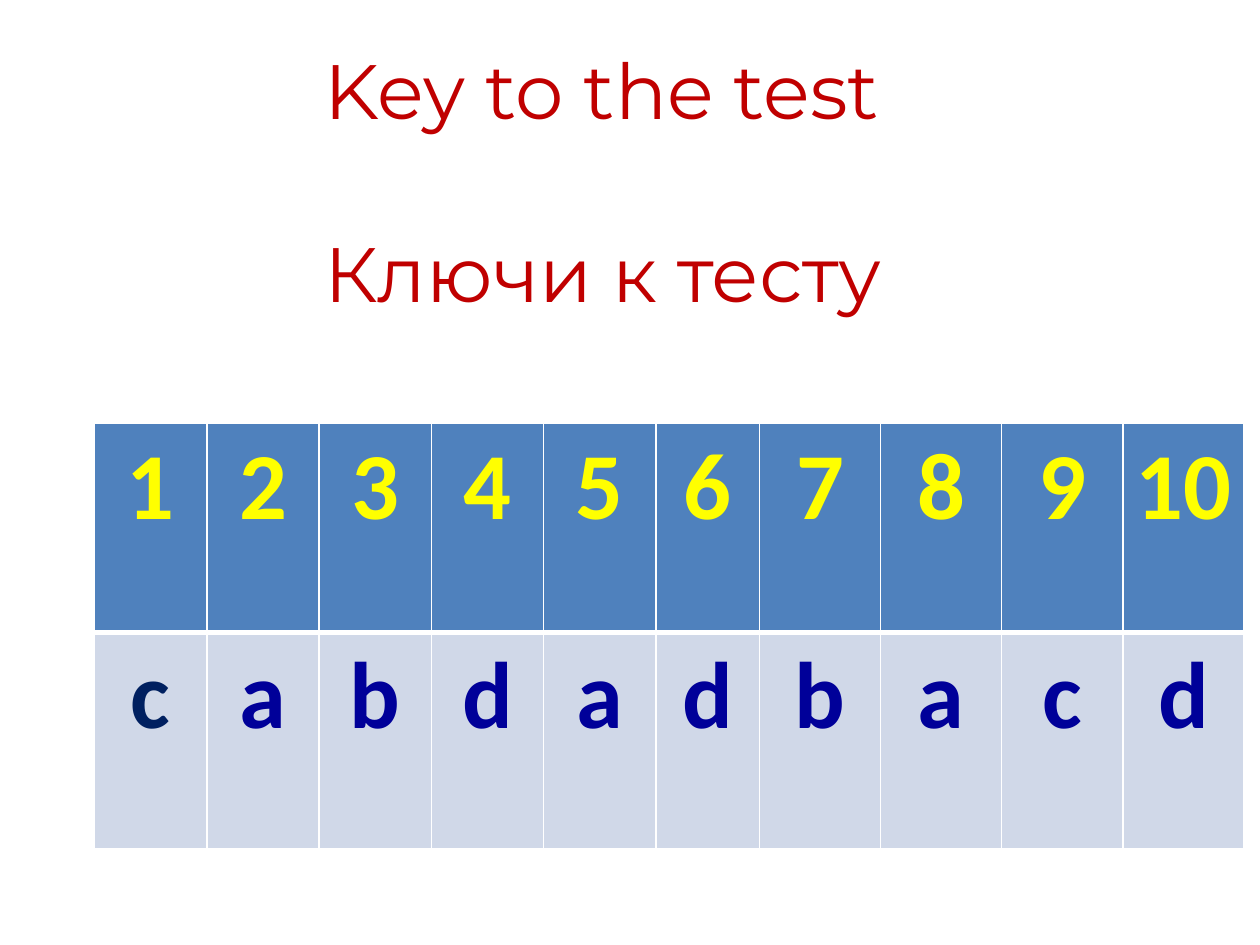
from lxml import etree
from pptx import Presentation
from pptx import util as u
from pptx.dml.color import RGBColor
from pptx.enum import text
from pptx.oxml import ns

RED = RGBColor(0xC0, 0x00, 0x00)
YELLOW = RGBColor(0xFF, 0xFF, 0x00)
NAVY = RGBColor(0x00, 0x20, 0x60)
BLUE = RGBColor(0x00, 0x00, 0x99)
HEADER = RGBColor(0x4F, 0x81, 0xBD)
PALE = RGBColor(0xD0, 0xD8, 0xE8)
WHITE = RGBColor(0xFF, 0xFF, 0xFF)


class Deck:
    """Hold the style and the current slide, and add its elements."""

    def __init__(self, prs):
        self.title_font, self.title_size = "Montserrat", 44
        self.cell_font, self.cell_size = "Calibri", 54
        self.s = prs.slides.add_slide(prs.slide_layouts[6])

    def title(self, x, y, w, h, lines, gap):
        sp = self.s.shapes.add_textbox(u.Pt(x), u.Pt(y), u.Pt(w), u.Pt(h))
        tf = sp.text_frame
        tf.word_wrap = False
        tf.text = "\n".join(lines)
        for i, p in enumerate(tf.paragraphs):
            if i:
                p.space_before = u.Pt(gap)
            self.style(p, self.title_font, self.title_size, RED)

    def style(self, p, font, size, color, bold=False):
        p.font.name = font
        p.font.size = u.Pt(size)
        p.font.bold = bold
        p.font.color.rgb = color

    def border(self, cell, side, width):
        tc_pr = cell._tc.get_or_add_tcPr()
        ln = etree.SubElement(tc_pr, ns.qn(f"a:ln{side}"), w=str(u.Pt(width)))
        fill = etree.SubElement(ln, ns.qn("a:solidFill"))
        etree.SubElement(fill, ns.qn("a:srgbClr"), val=str(WHITE))

    def cell(self, cell, value, color, fill, top, bottom):
        cell.text = value
        p = cell.text_frame.paragraphs[0]
        p.alignment = text.PP_ALIGN.CENTER
        self.style(p, self.cell_font, self.cell_size, color, bold=True)
        for side, width in zip("LRTB", (1, 1, top, bottom)):
            self.border(cell, side, width)
        cell.fill.solid()
        cell.fill.fore_color.rgb = fill

    def answer_table(self, x, y, widths, heights, answers):
        frame = self.s.shapes.add_table(
            2, len(answers), u.Pt(x), u.Pt(y), u.Pt(sum(widths)), u.Pt(sum(heights)))
        table = frame.table
        for row, height in zip(table.rows, heights):
            row.height = u.Pt(height)
        for i, (width, answer) in enumerate(zip(widths, answers)):
            table.columns[i].width = u.Pt(width)
            self.cell(table.cell(0, i), str(i + 1), YELLOW, HEADER, 1, 3)
            self.cell(table.cell(1, i), answer, BLUE if i else NAVY, PALE, 3, 1)


def main():
    prs = Presentation()
    prs.slide_width, prs.slide_height = u.Pt(720), u.Pt(540)
    deck = Deck(prs)
    deck.title(178.6, 20.9, 375.8, 167, ["Key to the test", "Ключи к тесту"], 51.5)
    widths = [64.2] * 5 + [59.1] + [69.25] * 4
    deck.answer_table(54, 242, widths, [119.5, 123.8], "cabdadbacd")
    prs.save("out.pptx")


if __name__ == "__main__":
    main()
